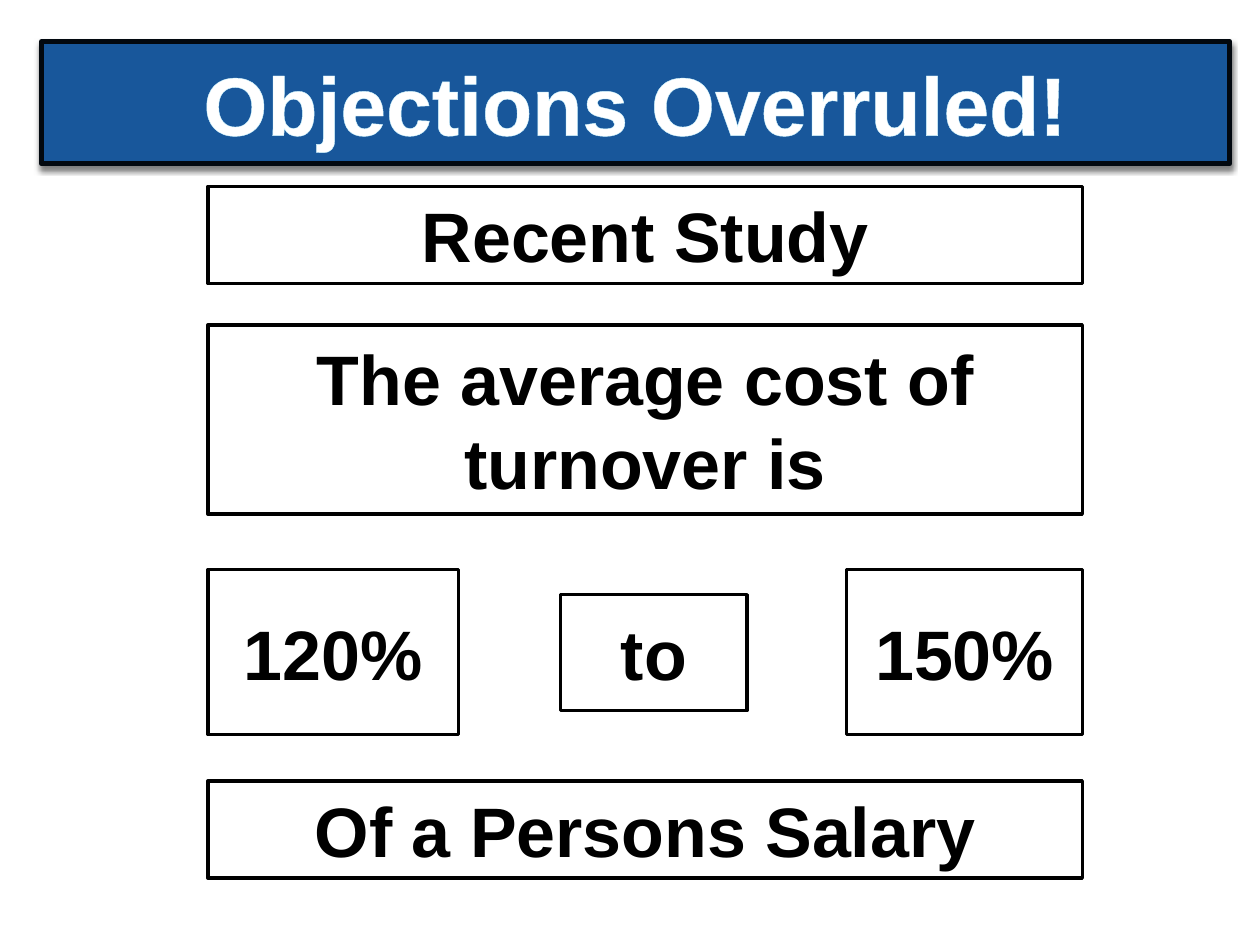
import pptx
import pptx.util
import pptx.dml.color
import pptx.enum.shapes
import pptx.enum.text
import lxml.etree

NS = "http://schemas.openxmlformats.org/drawingml/2006/main"


def tint(code):
    """Turn a hex string into a colour."""
    return pptx.dml.color.RGBColor.from_string(code)


def place(shape, box):
    """Move a shape to a box of left, top, width and height in inches."""
    shape.left, shape.top, shape.width, shape.height = map(pptx.util.Inches, box)


def style(shape, text, size, ink, fill, edge, width):
    """Fill and outline a shape and write centred bold text in it."""
    shape.fill.solid()
    shape.fill.fore_color.rgb = tint(fill)
    shape.line.color.rgb = tint(edge)
    shape.line.width = pptx.util.Pt(width)
    frame = shape.text_frame
    frame.text = text
    frame.word_wrap = True
    frame.auto_size = pptx.enum.text.MSO_AUTO_SIZE.NONE
    frame.vertical_anchor = pptx.enum.text.MSO_ANCHOR.MIDDLE
    line = frame.paragraphs[0]
    line.alignment = pptx.enum.text.PP_ALIGN.CENTER
    font = line.runs[0].font
    font.name, font.size, font.bold = "Arial", pptx.util.Pt(size), True
    font.color.rgb = tint(ink)


def banner(slide, text, box):
    """Set the title as a blue banner with a soft shadow and outlined text."""
    title = slide.shapes.title
    place(title, box)
    style(title, text, 47, "FFFFFF", "18579B", "02080F", 3)
    blur, drop = pptx.util.Pt(3), pptx.util.Pt(2)
    shade = lxml.etree.fromstring(
        f'<a:effectLst xmlns:a="{NS}"><a:outerShdw blurRad="{blur}" dist="{drop}" '
        'dir="5400000" algn="t" rotWithShape="0"><a:srgbClr val="000000">'
        '<a:alpha val="50000"/></a:srgbClr></a:outerShdw></a:effectLst>')
    title.element.spPr.append(shade)
    rim = lxml.etree.fromstring(
        f'<a:ln xmlns:a="{NS}" w="{pptx.util.Pt(1)}"><a:solidFill>'
        '<a:srgbClr val="CCF2FD"/></a:solidFill></a:ln>')
    title.text_frame.paragraphs[0].runs[0].font._element.insert(0, rim)


def card(slide, text, box):
    """Add a white box with a black edge."""
    shape = slide.shapes.add_shape(
        pptx.enum.shapes.MSO_SHAPE.RECTANGLE, 0, 0, 0, 0)
    place(shape, box)
    shape.shadow.inherit = False
    style(shape, text, 40, "000000", "FFFFFF", "000000", 2)


def study(slide, box):
    """Place the study's statements and its range inside a box."""
    left, top, wide, high = box
    low = 0.77
    card(slide, "Recent Study", (left, top, wide, low))
    card(slide, "The average cost of turnover is", (left, top + 1.1, wide, 1.5))
    row = top + 3.04
    tall = 1.31
    card(slide, "120%", (left, row, 1.99, tall))
    card(slide, "to", (left + 2.8, row + 0.2, 1.48, 0.92))
    card(slide, "150%", (left + wide - 1.87, row, 1.87, tall))
    card(slide, "Of a Persons Salary", (left, top + high - low, wide, low))


def main():
    """Build and save the slide."""
    deck = pptx.Presentation()
    deck.slide_width = pptx.util.Inches(10)
    deck.slide_height = pptx.util.Inches(7.5)
    slide = deck.slides.add_slide(deck.slide_layouts[5])
    banner(slide, "Objections Overruled!", (0.33, 0.33, 9.43, 0.97))
    study(slide, (1.65, 1.48, 6.94, 5.49))
    deck.save("out.pptx")


if __name__ == "__main__":
    main()
